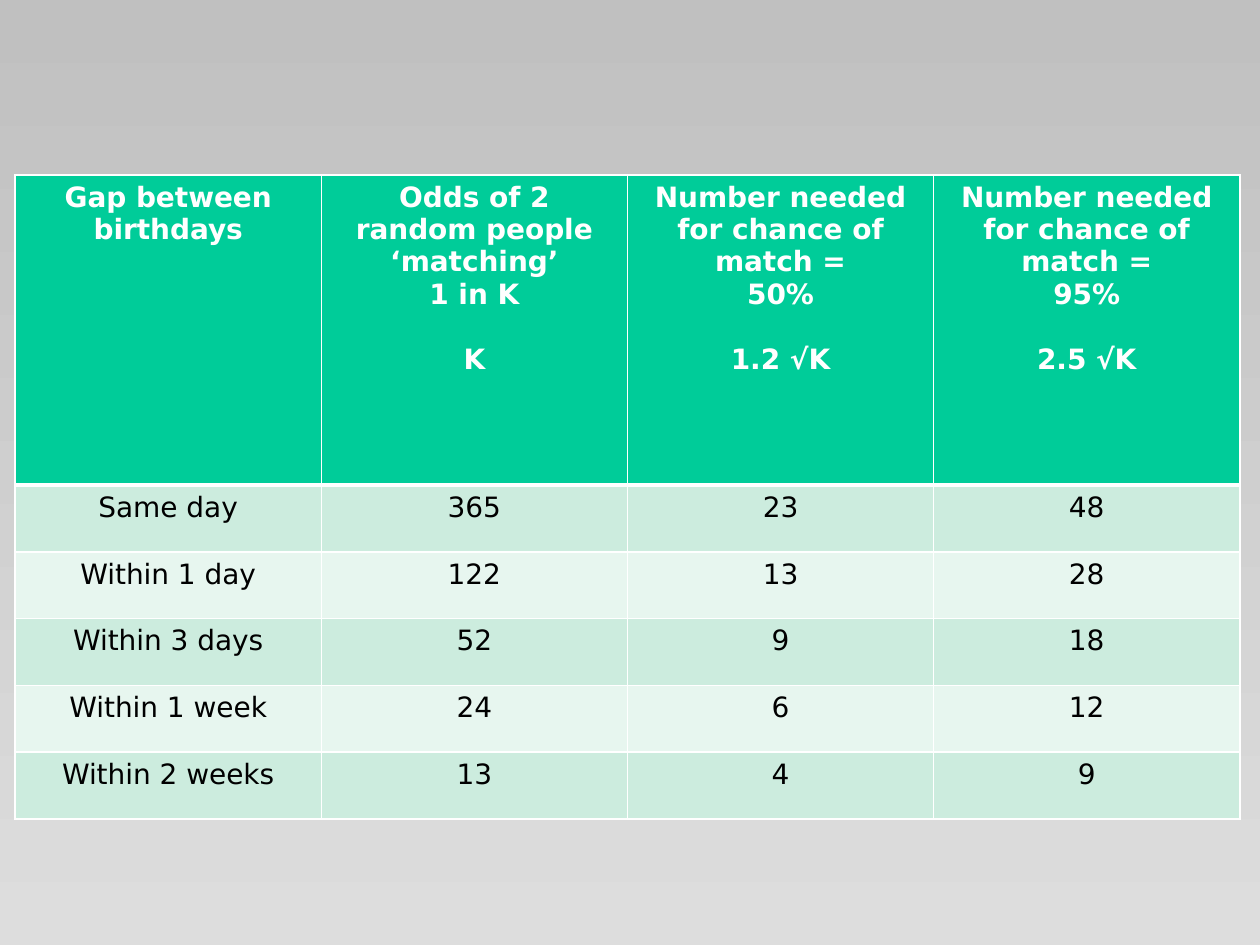
"""Build a slide with a table of birthday matching odds."""
import dataclasses

import lxml.etree
import pptx
import pptx.dml.color
import pptx.enum.text
import pptx.oxml.ns
import pptx.table
import pptx.util

Inches = pptx.util.Inches
Pt = pptx.util.Pt
RGBColor = pptx.dml.color.RGBColor

WHITE = RGBColor(0xFF, 0xFF, 0xFF)
BLACK = RGBColor(0x00, 0x00, 0x00)
GREEN = RGBColor(0x00, 0xCC, 0x99)
MINT = RGBColor(0xCC, 0xEC, 0xDE)
PALE_MINT = RGBColor(0xE7, 0xF6, 0xEF)
BACKGROUND = (RGBColor(0xC0, 0xC0, 0xC0), RGBColor(0xDD, 0xDD, 0xDD))

FONT = "DejaVu Sans"
FONT_SIZE = Pt(16)
FORMULA_GAP = Pt(18.6)
COLUMN_WIDTH = Inches(2.43)
HEADER_HEIGHT = Inches(2.46)
ROW_HEIGHT = Inches(0.53)


@dataclasses.dataclass(frozen=True)
class Heading:
    lines: tuple[str, ...]
    formula: str = ""


@dataclasses.dataclass(frozen=True)
class CellStyle:
    fill: RGBColor
    color: RGBColor
    bold: bool = False
    top: float = 1
    bottom: float = 1


HEADINGS = (
    Heading(("Gap between birthdays",)),
    Heading(("Odds of 2 random people ‘matching’", "1 in K"), "K"),
    Heading(("Number needed for chance of match =", "50%"), "1.2 √K"),
    Heading(("Number needed for chance of match =", "95%"), "2.5 √K"),
)
ROWS = (
    ("Same day", 365, 23, 48),
    ("Within 1 day", 122, 13, 28),
    ("Within 3 days", 52, 9, 18),
    ("Within 1 week", 24, 6, 12),
    ("Within 2 weeks", 13, 4, 9),
)
HEADER_STYLE = CellStyle(GREEN, WHITE, bold=True, bottom=3)


def add_borders(cell: pptx.table._Cell, top: float, bottom: float) -> None:
    qn = pptx.oxml.ns.qn
    properties = cell._tc.get_or_add_tcPr()
    widths = {"a:lnL": 1, "a:lnR": 1, "a:lnT": top, "a:lnB": bottom}
    for position, (tag, width) in enumerate(widths.items()):
        line = lxml.etree.Element(qn(tag), w=str(Pt(width)))
        fill = lxml.etree.SubElement(line, qn("a:solidFill"))
        lxml.etree.SubElement(fill, qn("a:srgbClr"), val=str(WHITE))
        properties.insert(position, line)


def fill_cell(cell: pptx.table._Cell, heading: Heading, style: CellStyle) -> None:
    cell.fill.solid()
    cell.fill.fore_color.rgb = style.fill
    add_borders(cell, style.top, style.bottom)
    frame = cell.text_frame
    lines = heading.lines + ((heading.formula,) if heading.formula else ())
    for index, text in enumerate(lines):
        para = frame.add_paragraph() if index else frame.paragraphs[0]
        para.alignment = pptx.enum.text.PP_ALIGN.CENTER
        if index == len(heading.lines):
            para.space_before = FORMULA_GAP
        span = para.add_run()
        span.text = text
        span.font.name = FONT
        span.font.size = FONT_SIZE
        span.font.bold = style.bold
        span.font.color.rgb = style.color


def main() -> None:
    deck = pptx.Presentation()
    deck.slide_width, deck.slide_height = Inches(10), Inches(7.5)
    page = deck.slides.add_slide(deck.slide_layouts.get_by_name("Blank"))
    backdrop = page.background.fill
    backdrop.gradient()
    backdrop.gradient_angle = 270
    for stop, color in zip(backdrop.gradient_stops, BACKGROUND):
        stop.color.rgb = color

    table = page.shapes.add_table(
        len(ROWS) + 1, len(HEADINGS), Inches(0.12), Inches(1.39),
        COLUMN_WIDTH * len(HEADINGS), HEADER_HEIGHT + ROW_HEIGHT * len(ROWS),
    ).table
    for column in table.columns:
        column.width = COLUMN_WIDTH
    for index, row in enumerate(table.rows):
        row.height = ROW_HEIGHT if index else HEADER_HEIGHT

    for column, heading in enumerate(HEADINGS):
        fill_cell(table.cell(0, column), heading, HEADER_STYLE)
    for index, values in enumerate(ROWS, start=1):
        style = CellStyle(
            MINT if index % 2 else PALE_MINT, BLACK, top=3 if index == 1 else 1
        )
        for column, value in enumerate(values):
            fill_cell(table.cell(index, column), Heading((str(value),)), style)

    deck.save("out.pptx")


if __name__ == "__main__":
    main()
